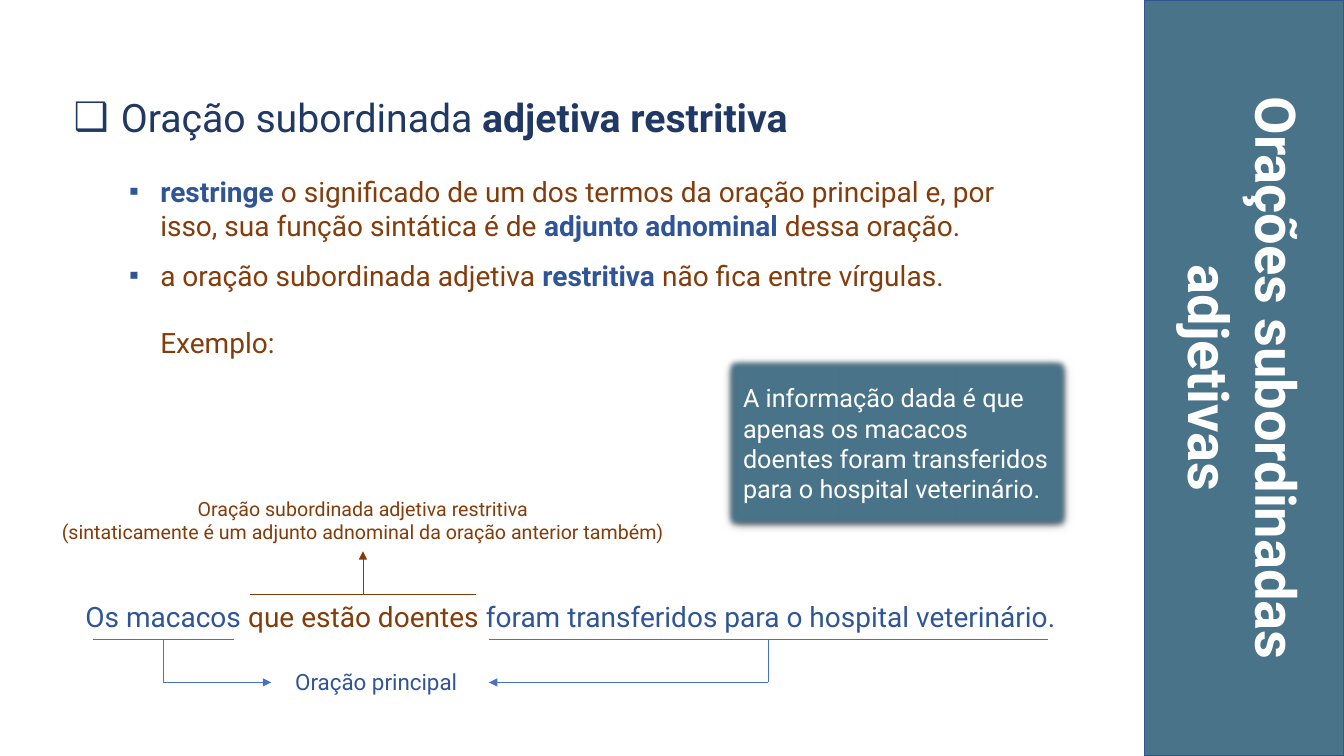
import dataclasses

import lxml.etree
import pptx
import pptx.dml.color
import pptx.enum.shapes
import pptx.enum.text
import pptx.oxml
import pptx.oxml.ns
import pptx.util

Inches = pptx.util.Inches
Pt = pptx.util.Pt
qn = pptx.oxml.ns.qn
ALIGN = pptx.enum.text.PP_ALIGN
ANCHOR = pptx.enum.text.MSO_ANCHOR


@dataclasses.dataclass(frozen=True)
class Theme:
    """Colours, font and type sizes of the slide."""
    font: str = "Roboto"
    bullet_font: str = "Arial"
    navy: str = "203864"
    blue: str = "2F5597"
    brown: str = "843C0B"
    teal: str = "497389"
    edge: str = "325491"
    rule: str = "4472C4"
    white: str = "FFFFFF"
    title: int = 40
    heading: int = 28
    body: int = 20
    card: int = 18
    label: int = 16
    note: int = 14


THEME = Theme()


def rgb(color):
    """Return the colour object for a hex string."""
    return pptx.dml.color.RGBColor.from_string(color)


def add_run(p, text, size, color, bold=False):
    """Append a formatted run to a paragraph."""
    r = p.add_run()
    r.text = text
    r.font.name = THEME.font
    r.font.size = Pt(size)
    r.font.bold = bold
    r.font.color.rgb = rgb(color)


def place(sp, left, top, width, height):
    """Move and size a shape, in inches."""
    sp.left, sp.top = Inches(left), Inches(top)
    sp.width, sp.height = Inches(width), Inches(height)


def add_text(s, box, lines, size, align=ALIGN.LEFT, wrap=True):
    """Add a text box whose lines are lists of (text, colour) runs."""
    tf = s.shapes.add_textbox(*map(Inches, box)).text_frame
    tf.word_wrap = wrap
    for i, line in enumerate(lines):
        p = tf.add_paragraph() if i else tf.paragraphs[0]
        p.alignment = align
        for text, color in line:
            add_run(p, text, size, color)


def add_line(s, start, end, color, arrow=False):
    """Draw a thin straight line, with an arrowhead at its end if asked."""
    sp = s.shapes.add_connector(
        pptx.enum.shapes.MSO_CONNECTOR.STRAIGHT, *map(Inches, (*start, *end)))
    sp.line.color.rgb = rgb(color)
    sp.line.width = Pt(0.5)
    if arrow:
        ln = sp.line._get_or_add_ln()
        lxml.etree.SubElement(ln, qn("a:tailEnd"), type="triangle")
    lxml.etree.SubElement(sp._element.spPr, qn("a:effectLst"))


def add_bracket(s, left, right, y, path_points, color):
    """Rule off a clause and lead from its middle to the last point."""
    add_line(s, (left, y), (right, y), color)
    points = [((left + right) / 2, y), *path_points]
    for i, (start, end) in enumerate(zip(points, points[1:]), 1):
        add_line(s, start, end, color, arrow=i == len(path_points))


def set_bullet(p, margin, hanging, char, color):
    """Set the indent and the bullet of a paragraph, or no bullet."""
    pPr = p._p.get_or_add_pPr()
    pPr.set("marL", str(Inches(margin)))
    pPr.set("indent", str(Inches(-hanging)))
    if char:
        clr = lxml.etree.SubElement(pPr, qn("a:buClr"))
        lxml.etree.SubElement(clr, qn("a:srgbClr"), val=color)
        lxml.etree.SubElement(pPr, qn("a:buFont"), typeface=THEME.bullet_font)
        lxml.etree.SubElement(pPr, qn("a:buChar"), char=char)
    else:
        lxml.etree.SubElement(pPr, qn("a:buNone"))


def build_title(s, box):
    """Fill the side band with the title, turned to read downwards."""
    left, top, width, height = box
    shift = (height - width) / 2
    sp = s.shapes.title
    place(sp, left - shift, top + shift, height, width)
    sp.rotation = 90
    sp.fill.solid()
    sp.fill.fore_color.rgb = rgb(THEME.teal)
    sp.line.color.rgb = rgb(THEME.edge)
    sp.line.width = Pt(1)
    tf = sp.text_frame
    tf.word_wrap = True
    tf.auto_size = pptx.enum.text.MSO_AUTO_SIZE.NONE
    tf.vertical_anchor = ANCHOR.MIDDLE
    tf.margin_left = tf.margin_right = tf.margin_top = tf.margin_bottom = 0
    p = tf.paragraphs[0]
    p.alignment = ALIGN.CENTER
    add_run(p, "Orações subordinadas adjetivas", THEME.title, THEME.white, True)


def build_definition(s, box):
    """Write the heading and the bulleted definition in the body."""
    t = THEME
    sp = s.placeholders[1]
    place(sp, *box)
    tf = sp.text_frame
    tf.word_wrap = True
    tf.auto_size = pptx.enum.text.MSO_AUTO_SIZE.NONE
    tf.vertical_anchor = ANCHOR.TOP
    rows = [
        (0.59, 0.47, "❑", 0, 24, t.heading, t.navy, t.navy,
         ["Oração subordinada ", "*adjetiva restritiva"]),
        (0.98, 0.31, "▪", 0, 12, t.body, t.brown, t.blue,
         ["*restringe", " o significado de um dos termos da oração principal e, "
          "por isso, sua função sintática é de ", "*adjunto adnominal ",
          "dessa oração."]),
        (0.98, 0.31, "▪", 0, 0, t.body, t.brown, t.blue,
         ["a oração subordinada adjetiva ", "*restritiva",
          " não fica entre vírgulas."]),
        (0.98, 0, None, 24, 0, t.body, t.brown, t.blue, ["Exemplo:"]),
    ]
    for i, (margin, hanging, char, before, after, size, color, accent,
            runs) in enumerate(rows):
        p = tf.add_paragraph() if i else tf.paragraphs[0]
        p.alignment = ALIGN.LEFT
        p.line_spacing = 1.0
        p.space_before, p.space_after = Pt(before), Pt(after)
        set_bullet(p, margin, hanging, char, accent)
        for text in runs:
            bold = text.startswith("*")
            add_run(p, text.lstrip("*"), size, accent if bold else color, bold)


def build_card(s, box):
    """Add the soft-edged card that explains the example."""
    sp = s.shapes.add_shape(
        pptx.enum.shapes.MSO_SHAPE.RECTANGLE, *map(Inches, box))
    sp.fill.solid()
    sp.fill.fore_color.rgb = rgb(THEME.teal)
    sp.line.fill.background()
    sp.shadow.inherit = False
    effects = sp._element.spPr.find(qn("a:effectLst"))
    shadow = lxml.etree.SubElement(
        effects, qn("a:outerShdw"), blurRad=str(Pt(4.5)), dist=str(Pt(1.5)),
        dir="5400000", algn="ctr", rotWithShape="0")
    black = lxml.etree.SubElement(shadow, qn("a:srgbClr"), val="000000")
    lxml.etree.SubElement(black, qn("a:alpha"), val="63000")
    lxml.etree.SubElement(effects, qn("a:softEdge"), rad=str(Pt(5)))
    tf = sp.text_frame
    tf.word_wrap = True
    tf.vertical_anchor = ANCHOR.MIDDLE
    tf.margin_left = tf.margin_right = Inches(0.2)
    tf.margin_top = tf.margin_bottom = Inches(0.12)
    p = tf.paragraphs[0]
    p.alignment = ALIGN.LEFT
    add_run(p, "A informação dada é que apenas os macacos doentes foram "
            "transferidos para o hospital veterinário.", THEME.card, THEME.white)


def build_example(s, box):
    """Analyse the example sentence with labels and brackets."""
    t = THEME
    x, y, width, height = box
    top, bottom = y + 1.02, y + 1.46
    label_y = y + height - 0.18
    add_text(s, (x + 0.17, top, width - 0.17, 0.44), [[
        ("Os macacos ", t.blue), ("que estão doentes", t.brown),
        (" foram transferidos para o hospital veterinário.", t.blue)]],
        t.body, ALIGN.CENTER)
    add_text(s, (x, y, 6.18, 0.59), [
        [("Oração subordinada adjetiva restritiva", t.brown)],
        [("(sintaticamente é um adjunto adnominal da oração anterior também)",
          t.brown)]], t.note, ALIGN.CENTER)
    add_text(s, (x + 2.32, label_y - 0.19, 1.86, 0.37),
             [[("Oração principal", t.blue)]], t.label, wrap=False)
    add_bracket(s, x + 1.97, x + 4.21, top, [(x + 3.09, y + 0.59)], t.brown)
    for left, right, tip in ((0.41, 1.81, 2.18), (4.34, 9.88, 4.34)):
        corner = (x + (left + right) / 2, label_y)
        add_bracket(s, x + left, x + right, bottom,
                    [corner, (x + tip, label_y)], t.rule)


def main():
    """Build the slide and save it."""
    prs = pptx.Presentation()
    prs.slide_width, prs.slide_height = Inches(13.33), Inches(7.5)
    s = prs.slides.add_slide(prs.slide_layouts[1])
    build_definition(s, (0.51, 0.88, 9.61, 2.76))
    build_example(s, (0.51, 4.88, 10.13, 2.07))
    build_card(s, (7.17, 3.52, 3.46, 1.75))
    build_title(s, (11.35, 0, 1.98, 7.5))
    prs.save("out.pptx")


if __name__ == "__main__":
    main()
